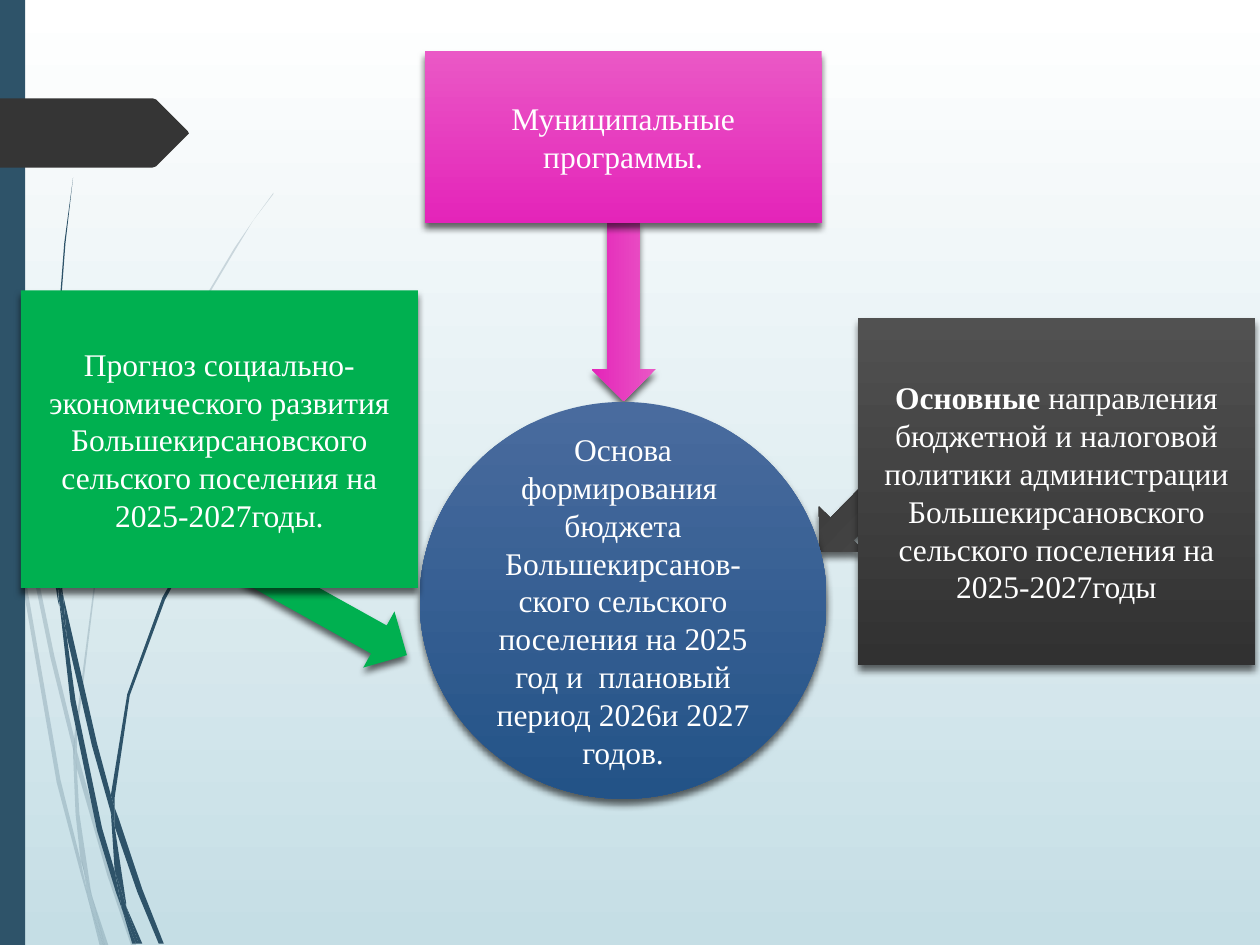
from lxml import etree
from pptx import Presentation
from pptx.dml.color import RGBColor
from pptx.enum.shapes import MSO_SHAPE
from pptx.enum.text import MSO_ANCHOR, PP_ALIGN
from pptx.oxml.ns import qn
from pptx.util import Pt

RECTANGLE = MSO_SHAPE.RECTANGLE
OVAL = MSO_SHAPE.OVAL
RIGHT_ARROW = MSO_SHAPE.RIGHT_ARROW
CENTER = PP_ALIGN.CENTER
MIDDLE = MSO_ANCHOR.MIDDLE

FONT = "Times New Roman"
OUTLINE_UNIT = Pt(0.72)  # outlines are drawn on a grid of 0.72 pt

COLORS = {
    "white": "FFFFFF", "sky": "C5DEE5", "stem": "2E5369", "tag": "353535",
    "green": "00B050", "pink_top": "EA58C6", "pink_low": "E424B9",
    "gray_top": "515151", "gray_low": "313131",
    "blue_top": "496B9E", "blue_low": "235387", "shadow": "000000",
}
PINK = ("pink_top", "pink_low")
GRAY = ("gray_top", "gray_low")
BLUE = ("blue_top", "blue_low")
GREEN = ("green",)

# Grass outlines, in grid units
PALE_STEMS = [
    [(8, 350), (6, 322), (0, 282), (0, 299), (7, 344)],
    [(40, 522), (59, 599), (59, 586), (43, 520), (25, 433), (10, 345),
     (12, 376), (25, 449)],
    [(64, 607), (61, 596), (61, 610), (85, 694), (104, 750), (108, 750),
     (88, 692)],
    [(83, 750), (86, 750), (73, 711)],
    [(64, 683), (48, 619), (22, 469), (12, 376), (8, 350), (19, 470),
     (45, 621), (64, 693), (70, 714), (69, 707)],
    [(58, 599), (60, 646), (64, 683), (67, 692), (73, 711), (72, 706),
     (63, 646), (61, 610), (61, 608)],
    [(61, 584), (76, 462), (111, 349), (159, 245), (187, 198), (201, 175),
     (217, 154), (217, 153), (201, 175), (186, 197), (158, 244), (110, 348),
     (75, 461), (59, 584), (59, 586), (61, 596)],
    [(70, 714), (79, 750), (82, 750)],
    [(61, 608), (61, 610), (61, 596), (59, 586), (58, 599)],
    [(67, 692), (65, 683), (69, 707), (70, 714), (82, 750), (83, 750),
     (73, 711)],
]
DARK_STEMS = [
    [(5, 110), (14, 233), (27, 355), (46, 477), (47, 481), (45, 457),
     (45, 453), (30, 355), (15, 232), (6, 109), (4, 48), (3, 0), (2, 0),
     (3, 48)],
    [(73, 592), (88, 645), (88, 631), (77, 590), (50, 472), (53, 505)],
    [(94, 649), (91, 641), (91, 656), (109, 708), (126, 749), (130, 749),
     (113, 706)],
    [(91, 691), (81, 657), (60, 556), (53, 505), (47, 477), (56, 557),
     (77, 659), (92, 708), (97, 722), (96, 717)],
    [(50, 472), (48, 453), (44, 349), (48, 245), (52, 193), (58, 141),
     (51, 193), (47, 245), (43, 349), (45, 449), (49, 472)],
    [(110, 749), (113, 749), (100, 719)],
    [(47, 477), (53, 505), (50, 472), (49, 472), (45, 449), (45, 453)],
    [(91, 633), (103, 552), (131, 476), (169, 406), (191, 374), (203, 359),
     (216, 344), (215, 344), (203, 358), (191, 373), (168, 405), (129, 474),
     (101, 551), (88, 631), (91, 641)],
    [(97, 722), (105, 749), (108, 749)],
    [(88, 645), (91, 691), (96, 706), (100, 719), (100, 716), (91, 656),
     (90, 651)],
    [(88, 645), (90, 651), (91, 656), (91, 641), (88, 631)],
    [(96, 706), (91, 691), (96, 717), (97, 722), (108, 749), (110, 749),
     (100, 719)],
]
TAG = [(149, 107), (124, 132), (121, 133), (0, 133), (0, 78), (121, 78),
       (124, 79), (149, 104), (149.5, 105.5)]

# Left, top, width, height in points; rotation in degrees
ARROW_SIZE = (102.2, 36.7)
ARROWS = [
    (136.8, 331.2, 29.1, GREEN),
    (452.9, 260.6, 134.5, GRAY),
    (305.3, 159.8, 90, PINK),
]
BOXES = [
    (OVAL, (239.8, 229.7, 232.6, 226.8), BLUE,
     [("Основа формирования  бюджета Большекирсанов-ского сельского "
       "поселения на 2025 год и  плановый период 2026и 2027 годов.", False)]),
    (RECTANGLE, (242.7, 29.2, 226.8, 98.4), PINK,
     [("Муниципальные программы.", False)]),
    (RECTANGLE, (490.3, 181.8, 226.8, 198.4), GRAY,
     [("Основные", True),
      (" направления бюджетной и налоговой политики администрации "
       "Большекирсановского сельского поселения на 2025-2027годы", False)]),
    (RECTANGLE, (12, 166, 226.8, 170), GREEN,
     [("Прогноз социально-экономического развития Большекирсановского "
       "сельского поселения на 2025-2027годы.", False)]),
]


def color(name):
    return RGBColor.from_string(COLORS[name])


def paint(fill, names):
    """One name gives a solid fill, two give a gradient from top to bottom."""
    if len(names) == 1:
        fill.solid()
        fill.fore_color.rgb = color(names[0])
        return
    fill.gradient()
    fill.gradient_angle = 270
    for stop, name, position in zip(fill.gradient_stops, names, (0, 1)):
        stop.color.rgb = color(name)
        stop.position = position


def style(shape, names):
    paint(shape.fill, names)
    shape.line.fill.background()
    shape.shadow.inherit = False


def add_shadow(shape):
    effects = shape.element.spPr.find(qn("a:effectLst"))
    shadow = etree.SubElement(effects, qn("a:outerShdw"), blurRad=str(Pt(4)),
                              dist=str(Pt(3)), dir="5400000", rotWithShape="0")
    tint = etree.SubElement(shadow, qn("a:srgbClr"), val=COLORS["shadow"])
    etree.SubElement(tint, qn("a:alpha"), val="60000")


def add_outline(page, points, name, opacity=100):
    builder = page.shapes.build_freeform(*points[0], scale=OUTLINE_UNIT)
    builder.add_line_segments(points[1:], close=True)
    shape = builder.convert_to_shape()
    style(shape, (name,))
    if opacity < 100:
        tint = shape.element.spPr.find(qn("a:solidFill"))[0]
        etree.SubElement(tint, qn("a:alpha"), val=str(opacity * 1000))


def add_preset(page, kind, frame, names):
    shape = page.shapes.add_shape(kind, *map(Pt, frame))
    style(shape, names)
    return shape


def add_arrow(page, left, top, rotation, names):
    arrow = add_preset(page, RIGHT_ARROW, (left, top, *ARROW_SIZE), names)
    arrow.rotation = rotation
    add_shadow(arrow)


def add_box(page, kind, frame, names, spans):
    box = add_preset(page, kind, frame, names)
    add_shadow(box)
    box.text_frame.word_wrap = True
    box.text_frame.vertical_anchor = MIDDLE
    para = box.text_frame.paragraphs[0]
    para.alignment = CENTER
    para.font.name = FONT
    para.font.size = Pt(18)
    para.font.color.rgb = color("white")
    for text, bold in spans:
        span = para.add_run()
        span.text = text
        span.font.bold = bold


def main():
    deck = Presentation()
    deck.slide_width, deck.slide_height = Pt(720), Pt(540)
    page = deck.slides.add_slide(deck.slide_layouts[6])
    paint(page.background.fill, ("white", "sky"))

    # Grass, side band and tag
    for points in PALE_STEMS:
        add_outline(page, points, "stem", opacity=20)
    for points in DARK_STEMS:
        add_outline(page, points, "stem")
    add_preset(page, RECTANGLE, (0, 0, 14.4, 540), ("stem",))
    add_outline(page, TAG, "tag")

    # Arrows lie behind the boxes they join
    for arrow in ARROWS:
        add_arrow(page, *arrow)
    for box in BOXES:
        add_box(page, *box)

    deck.save("out.pptx")


if __name__ == "__main__":
    main()
